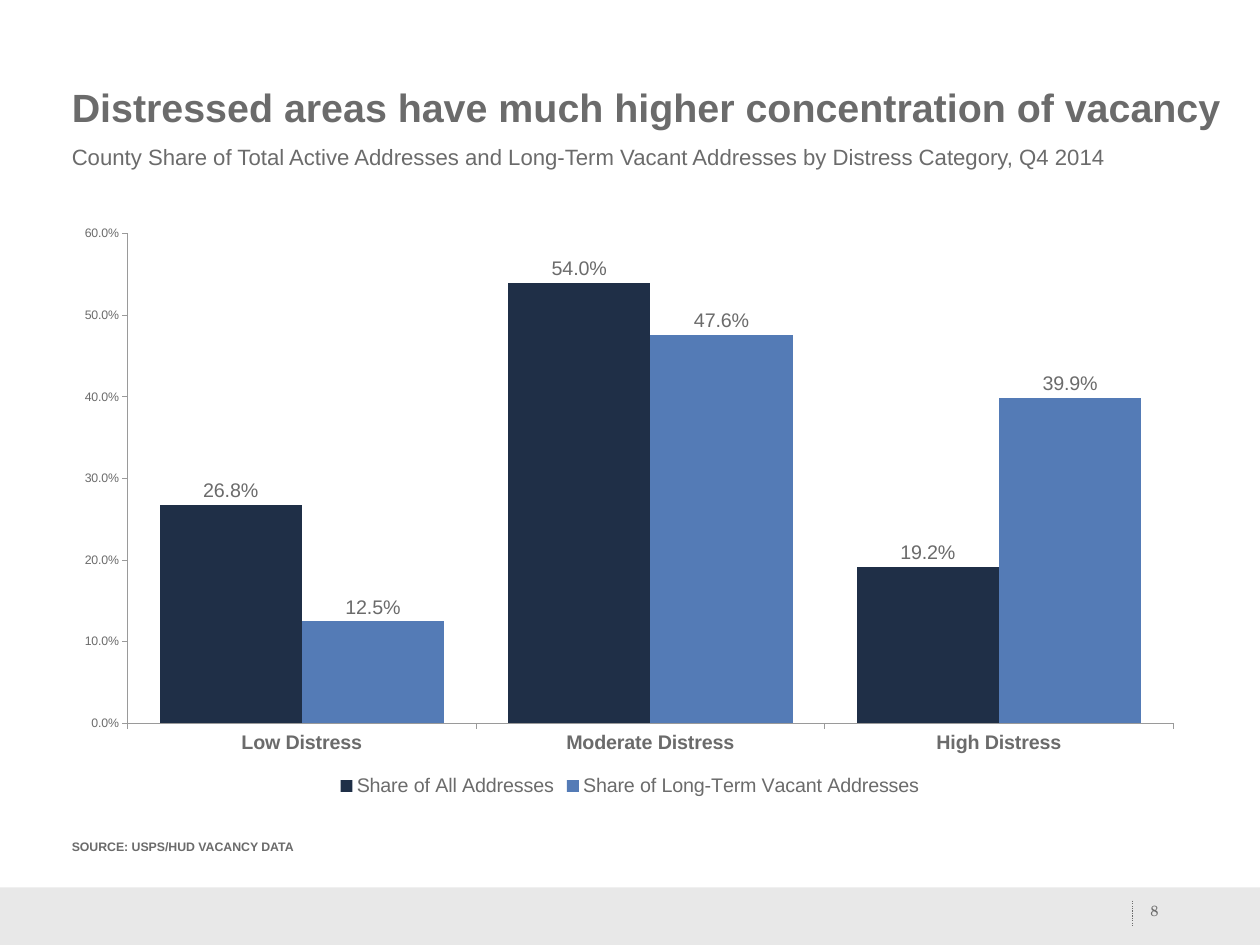
from lxml import etree
from pptx import Presentation
from pptx.chart.data import CategoryChartData
from pptx.dml.color import RGBColor
from pptx.enum.chart import XL_CHART_TYPE, XL_LABEL_POSITION, XL_LEGEND_POSITION, XL_TICK_MARK
from pptx.enum.dml import MSO_LINE
from pptx.enum.shapes import MSO_CONNECTOR, MSO_SHAPE
from pptx.enum.text import MSO_ANCHOR, MSO_AUTO_SIZE, PP_ALIGN
from pptx.oxml.ns import qn
from pptx.util import Inches, Pt

COLUMNS = XL_CHART_TYPE.COLUMN_CLUSTERED
ABOVE_BAR = XL_LABEL_POSITION.OUTSIDE_END
LEGEND_BOTTOM = XL_LEGEND_POSITION.BOTTOM
TICK_OUT, TICK_NONE = XL_TICK_MARK.OUTSIDE, XL_TICK_MARK.NONE
DOTTED = MSO_LINE.ROUND_DOT
STRAIGHT = MSO_CONNECTOR.STRAIGHT
RECTANGLE = MSO_SHAPE.RECTANGLE
TOP, MIDDLE, BOTTOM = MSO_ANCHOR.TOP, MSO_ANCHOR.MIDDLE, MSO_ANCHOR.BOTTOM
LEFT, CENTER = PP_ALIGN.LEFT, PP_ALIGN.CENTER
NO_AUTOFIT = MSO_AUTO_SIZE.NONE

COMPARISON_LAYOUT = 4
PERCENT = "0.0%"
CATEGORIES = ["Low Distress", "Moderate Distress", "High Distress"]
SERIES = [
    ("Share of All Addresses", [0.268, 0.54, 0.192], "1F2F47"),
    ("Share of Long-Term Vacant Addresses", [0.125, 0.476, 0.399], "547BB6"),
]


def color(hex_code):
    return RGBColor.from_string(hex_code)


def style_font(font, size, bold=False, name="Arial", hex_code="6B6B6B"):
    font.size = Pt(size)
    font.bold = bold
    font.name = name
    font.color.rgb = color(hex_code)


def write(frame, text, size, bold=False, name="Arial", align=LEFT, anchor=TOP,
          spacing=1.0, inset=(0.1, 0.05)):
    frame.word_wrap = True
    frame.auto_size = NO_AUTOFIT
    frame.vertical_anchor = anchor
    frame.margin_left = frame.margin_right = Inches(inset[0])
    frame.margin_top = frame.margin_bottom = Inches(inset[1])
    paragraph = frame.paragraphs[0]
    paragraph.alignment = align
    paragraph.line_spacing = spacing
    paragraph.space_before = Pt(0)
    run = paragraph.add_run()
    run.text = text
    style_font(run.font, size, bold, name)


class ReportSlide:
    axis_color = "9A9A9A"
    divider_color = "6B6B6B"

    def __init__(self, presentation):
        self.slide = presentation.slides.add_slide(presentation.slide_layouts[COMPARISON_LAYOUT])
        self.used = []

    def band(self, left, top, width, height, fill):
        band = self.slide.shapes.add_shape(
            RECTANGLE, Inches(left), Inches(top), Inches(width), Inches(height))
        band.fill.solid()
        band.fill.fore_color.rgb = color(fill)
        band.line.fill.background()
        band.shadow.inherit = False

    def divider(self, x, top, bottom):
        divider = self.slide.shapes.add_connector(
            STRAIGHT, Inches(x), Inches(top), Inches(x), Inches(bottom))
        divider.line.color.rgb = color(self.divider_color)
        divider.line.width = Pt(1)
        divider.line.dash_style = DOTTED
        etree.SubElement(divider.element.spPr, qn("a:effectLst"))

    def placeholder(self, index, text, left, top, width, height, **text_format):
        holder = next(p for p in self.slide.placeholders if p.placeholder_format.idx == index)
        holder.left, holder.top = Inches(left), Inches(top)
        holder.width, holder.height = Inches(width), Inches(height)
        write(holder.text_frame, text, **text_format)
        self.used.append(index)

    def text(self, text, left, top, width, height, **text_format):
        box = self.slide.shapes.add_textbox(
            Inches(left), Inches(top), Inches(width), Inches(height))
        write(box.text_frame, text, **text_format)

    def column_chart(self, left, top, width, height, plot_area):
        data = CategoryChartData(number_format=PERCENT)
        data.categories = CATEGORIES
        for name, shares, _ in SERIES:
            data.add_series(name, shares)
        chart = self.slide.shapes.add_chart(
            COLUMNS, Inches(left), Inches(top), Inches(width), Inches(height), data).chart
        chart.has_title = False
        style_font(chart.font, 10)

        plot = chart.plots[0]
        plot.gap_width = 45
        plot.overlap = 0
        plot.vary_by_categories = False
        for series, (_, _, fill) in zip(plot.series, SERIES):
            series.format.fill.solid()
            series.format.fill.fore_color.rgb = color(fill)
            labels = series.data_labels
            labels.show_value = True
            labels.number_format = PERCENT
            labels.number_format_is_linked = False
            labels.position = ABOVE_BAR
            style_font(labels.font, 16)

        for axis, size, bold in ((chart.category_axis, 16, True), (chart.value_axis, 10, False)):
            axis.has_major_gridlines = False
            axis.major_tick_mark = TICK_OUT
            axis.minor_tick_mark = TICK_NONE
            axis.format.line.color.rgb = color(self.axis_color)
            axis.format.line.width = Pt(0.75)
            style_font(axis.tick_labels.font, size, bold)
        shares_axis = chart.value_axis
        shares_axis.minimum_scale, shares_axis.maximum_scale = 0, 0.6
        shares_axis.major_unit = 0.1
        shares_axis.tick_labels.number_format = PERCENT
        shares_axis.tick_labels.number_format_is_linked = False

        chart.has_legend = True
        chart.legend.position = LEGEND_BOTTOM
        chart.legend.include_in_layout = False
        style_font(chart.legend.font, 16)
        self.place_plot(chart, plot_area)

    def place_plot(self, chart, plot_area):
        area = chart.element.find(".//" + qn("c:plotArea"))
        for automatic in area.findall(qn("c:layout")):
            area.remove(automatic)
        layout = etree.Element(qn("c:layout"))
        manual = etree.SubElement(layout, qn("c:manualLayout"))
        settings = [("layoutTarget", "inner"), ("xMode", "edge"), ("yMode", "edge")]
        settings += zip("xywh", plot_area)
        for tag, value in settings:
            etree.SubElement(manual, qn("c:" + tag)).set("val", str(value))
        area.insert(0, layout)

    def remove_unused(self):
        for holder in list(self.slide.placeholders):
            if holder.placeholder_format.idx not in self.used:
                holder.element.getparent().remove(holder.element)


def main():
    presentation = Presentation()
    presentation.slide_width, presentation.slide_height = Inches(14.22), Inches(10.67)
    report = ReportSlide(presentation)
    report.band(0, 10.02, 14.22, 0.65, "E8E8E8")
    report.divider(12.78, 10.17, 10.46)
    report.placeholder(0, "Distressed areas have much higher concentration of vacancy",
                       0.71, 0.83, 13.51, 0.74, size=32, bold=True, anchor=MIDDLE)
    report.placeholder(1, "County Share of Total Active Addresses and Long-Term Vacant "
                       "Addresses by Distress Category, Q4 2014",
                       0.71, 1.57, 12.8, 0.58, size=18)
    report.column_chart(0.71, 2.44, 12.8, 6.6, plot_area=(0.057, 0.03, 0.922, 0.838))
    report.placeholder(3, "SOURCE: USPS/HUD VACANCY DATA",
                       0.71, 9.42, 13.51, 0.6, size=10, bold=True)
    report.text("8", 12.85, 9.81, 0.36, 0.57, size=12, name="TeX Gyre Schola",
                align=CENTER, anchor=BOTTOM, spacing=1.5, inset=(0, 0))
    report.remove_unused()
    presentation.save("out.pptx")


if __name__ == "__main__":
    main()
